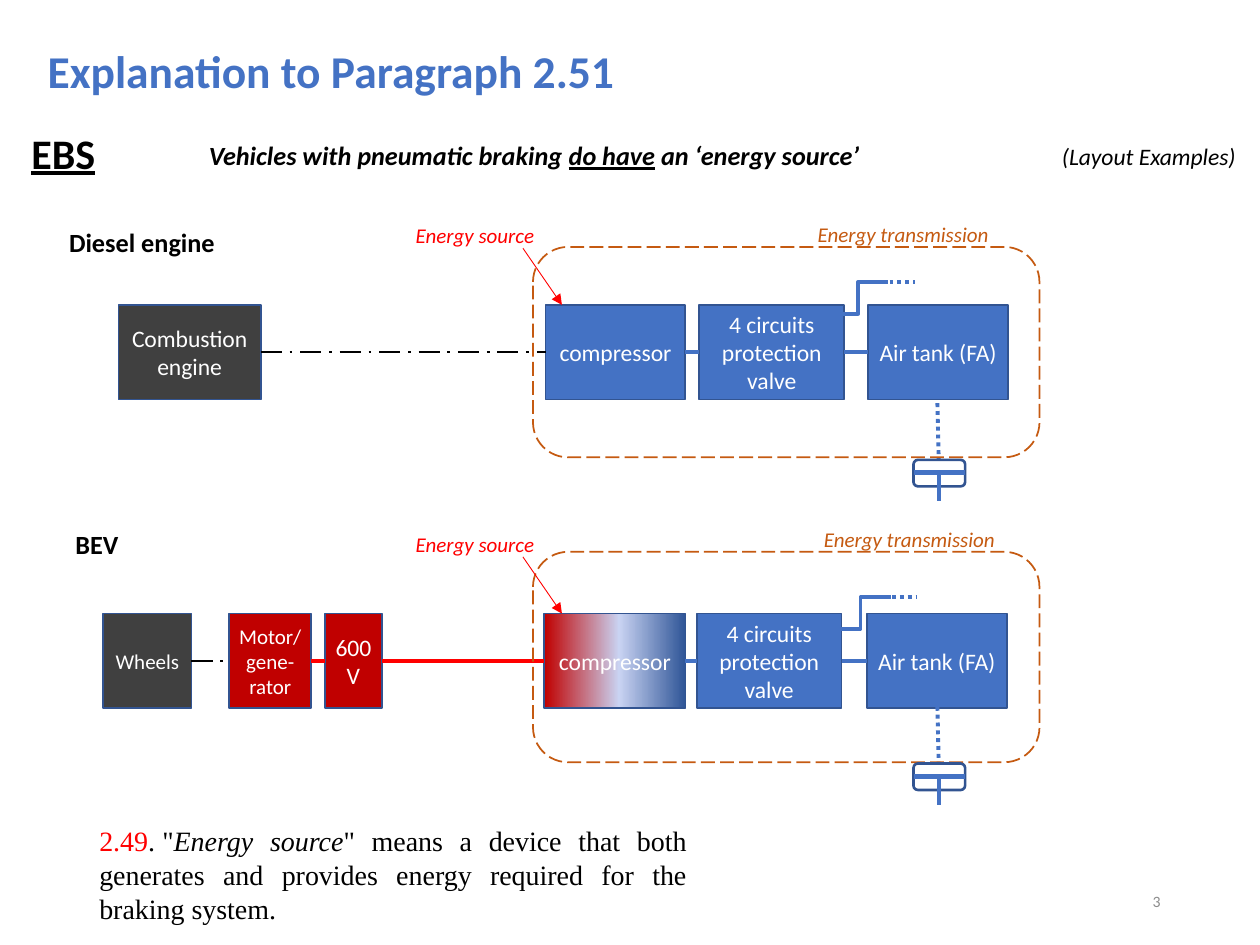
from copy import deepcopy
from pptx import Presentation
from pptx.dml.color import RGBColor
from pptx.enum.dml import MSO_LINE
from pptx.enum.shapes import MSO_CONNECTOR, MSO_SHAPE
from pptx.enum.text import MSO_ANCHOR, MSO_AUTO_SIZE, PP_ALIGN
from pptx.oxml.ns import qn
from pptx.util import Inches, Pt
from lxml import etree

BLACK = RGBColor(0x00, 0x00, 0x00)
WHITE = RGBColor(0xFF, 0xFF, 0xFF)
GRAY = RGBColor(0x8C, 0x8C, 0x8C)
DARK = RGBColor(0x40, 0x40, 0x40)
BLUE = RGBColor(0x44, 0x72, 0xC4)
NAVY = RGBColor(0x32, 0x54, 0x91)
DEEP = RGBColor(0x2F, 0x55, 0x97)
PALE = RGBColor(0xC9, 0xD3, 0xF2)
RUST = RGBColor(0xC5, 0x5A, 0x11)
MAROON = RGBColor(0xC0, 0x00, 0x00)
RED = RGBColor(0xFF, 0x00, 0x00)

deck = Presentation()
deck.slide_width, deck.slide_height = Inches(10), Inches(7.5)
slide = deck.slides.add_slide(deck.slide_layouts[6])
shapes = slide.shapes


def label(x, y, w, h, text, size, color, bold=False, italic=False, wrap=False):
    frame = shapes.add_textbox(Inches(x), Inches(y), Inches(w), Inches(h)).text_frame
    frame.word_wrap = wrap
    para = frame.paragraphs[0]
    para.text = text
    font = para.font
    font.name, font.size, font.bold, font.italic = "Calibri", Pt(size), bold, italic
    font.color.rgb = color
    return frame


def wire(x1, y1, x2, y2, color, width, dash=None):
    line = shapes.add_connector(
        MSO_CONNECTOR.STRAIGHT, Inches(x1), Inches(y1), Inches(x2), Inches(y2))
    line.line.color.rgb = color
    line.line.width = Pt(width)
    if dash:
        line.line.dash_style = dash
    etree.SubElement(line._element.spPr, qn("a:effectLst"))
    return line


boxes = {}
for key, x, y, w, text, size, fill in [
    ("engine", 0.94, 2.42, 1.13, "Combustion engine", 13.5, DARK),
    ("comp1", 4.33, 2.42, 1.11, "compressor", 13.5, BLUE),
    ("valve1", 5.55, 2.42, 1.15, "4 circuits protection valve", 13.5, BLUE),
    ("tank1", 6.89, 2.42, 1.11, "Air tank (FA)", 13.5, BLUE),
    ("wheels", 0.82, 4.87, 0.7, "Wheels", 12, DARK),
    ("motor", 1.82, 4.87, 0.65, "Motor/ gene-rator", 12, MAROON),
    ("volt", 2.58, 4.87, 0.45, "600V", 13.5, MAROON),
    ("comp2", 4.32, 4.87, 1.12, "compressor", 13.5, None),
    ("valve2", 5.53, 4.87, 1.15, "4 circuits protection valve", 13.5, BLUE),
    ("tank2", 6.88, 4.87, 1.11, "Air tank (FA)", 13.5, BLUE),
]:
    box = shapes.add_shape(
        MSO_SHAPE.RECTANGLE, Inches(x), Inches(y), Inches(w), Inches(0.75))
    box.shadow.inherit = False
    box.line.color.rgb = NAVY
    box.line.width = Pt(1)
    if fill:
        box.fill.solid()
        box.fill.fore_color.rgb = fill
    else:
        box.fill.gradient()
        box.fill.gradient_angle = 0
        stops = box._element.spPr.find(qn("a:gradFill")).find(qn("a:gsLst"))
        stops.insert(1, deepcopy(stops[0]))
        for stop, color, place in zip(
                box.fill.gradient_stops, (MAROON, PALE, DEEP), (0, 0.53, 1)):
            stop.color.rgb = color
            stop.position = place
    frame = box.text_frame
    frame.word_wrap = True
    frame.vertical_anchor = MSO_ANCHOR.MIDDLE
    frame.margin_left = frame.margin_right = Inches(0.07)
    frame.margin_top = frame.margin_bottom = Inches(0.04)
    para = frame.paragraphs[0]
    para.text = text
    para.alignment = PP_ALIGN.CENTER
    para.font.name, para.font.size = "Calibri", Pt(size)
    para.font.color.rgb = WHITE
    boxes[key] = box

for start, end, color, width, dash in [
    ("engine", "comp1", BLACK, 1.5, MSO_LINE.LONG_DASH_DOT),
    ("comp1", "valve1", BLUE, 2.25, None),
    ("valve1", "tank1", BLUE, 2.25, None),
    ("wheels", "motor", BLACK, 1.5, MSO_LINE.LONG_DASH_DOT),
    ("motor", "volt", RED, 2.25, None),
    ("volt", "comp2", RED, 2.25, None),
    ("comp2", "valve2", BLUE, 2.25, None),
    ("valve2", "tank2", BLUE, 2.25, None),
]:
    link = wire(0, 0, 1, 1, color, width, dash)
    link.begin_connect(boxes[start], 3)
    link.end_connect(boxes[end], 1)

for top, frame_y, note_x, pipe_x, pipe_y, drop, cup in [
    (2.42, 1.96, 6.39, 6.65, 2.24, 3.2, 3.65),
    (4.87, 4.38, 6.44, 6.67, 4.74, 5.61, 6.06),
]:
    pipe = shapes.build_freeform(Inches(pipe_x), Inches(pipe_y + 0.25))
    pipe.add_line_segments(
        [(Inches(pipe_x + dx), Inches(pipe_y + dy))
         for dx, dy in ((0.16, 0.25), (0.16, 0), (0.4, 0))], close=False)
    bend = pipe.convert_to_shape()
    bend.shadow.inherit = False
    bend.fill.background()
    bend.line.color.rgb = BLUE
    bend.line.width = Pt(2.25)
    wire(pipe_x + 0.41, pipe_y, pipe_x + 0.61, pipe_y, BLUE, 2.25, MSO_LINE.ROUND_DOT)

    wire(7.44, drop, 7.45, cup, BLUE, 2.25, MSO_LINE.ROUND_DOT)
    for x, y, w, h, color, width, dash in [
        (4.23, frame_y, 4.02, 1.67, RUST, 1, MSO_LINE.LONG_DASH),
        (7.25, cup, 0.41, 0.21, NAVY, 1.5, None),
    ]:
        ring = shapes.add_shape(
            MSO_SHAPE.ROUNDED_RECTANGLE, Inches(x), Inches(y), Inches(w), Inches(h))
        ring.shadow.inherit = False
        ring.fill.background()
        ring.line.color.rgb = color
        ring.line.width = Pt(width)
        if dash:
            ring.line.dash_style = dash
    wire(7.25, cup + 0.1, 7.66, cup + 0.1, BLUE, 3)
    wire(7.45, cup + 0.09, 7.45, cup + 0.33, BLUE, 2.25)

    label(note_x, frame_y - 0.25, 1.73, 0.3, "Energy transmission", 12, RUST,
          italic=True, wrap=True)
    label(3.2, top - 0.7, 1.15, 0.3, "Energy source", 12, RED, italic=True)
    arrow = wire(4.15, top - 0.45, 4.46, top, RED, 0.5)
    arrow.line._get_or_add_ln().append(
        etree.Element(qn("a:tailEnd"), type="triangle"))

title = label(0.28, 0.09, 7.72, 0.94, "Explanation to Paragraph 2.51", 26, BLUE,
              bold=True, wrap=True)
title.vertical_anchor = MSO_ANCHOR.MIDDLE
title.paragraphs[0].space_after = Pt(12)
ebs = label(0.15, 0.96, 0.72, 0.5, "EBS", 24, BLACK, bold=True)
ebs.paragraphs[0].font.underline = True
label(0.45, 1.75, 1.36, 0.35, "Diesel engine", 15, BLACK, bold=True)
label(0.5, 4.14, 0.55, 0.35, "BEV", 15, BLACK, bold=True)
label(8.33, 1.08, 1.6, 0.33, "(Layout Examples)", 13.5, BLACK, italic=True)

head = label(1.56, 1.06, 5.4, 0.35, "Vehicles with pneumatic braking ", 15, BLACK,
             bold=True, italic=True).paragraphs[0]
for text, under in [("do have", True), (" an ‘energy source’", False)]:
    run = head.add_run()
    run.text = text
    run.font.underline = under

rule = label(0.69, 6.49, 4.86, 0.91, "", 16, BLACK, wrap=True)
rule.auto_size = MSO_AUTO_SIZE.SHAPE_TO_FIT_TEXT
para = rule.paragraphs[0]
para.alignment = PP_ALIGN.JUSTIFY
para.space_after = Pt(6)
para.font.name = "Times New Roman"
for text, color, slant in [
    ("2.49", RED, False),
    (".\t\"", BLACK, False),
    ("Energy source", BLACK, True),
    ("\" means a device that both generates and provides energy required "
     "for the braking system.", BLACK, False),
]:
    run = para.add_run()
    run.text = text
    run.font.color.rgb = color
    run.font.italic = slant

page = label(7.06, 6.95, 2.25, 0.4, "3", 9, GRAY, wrap=True)
page.vertical_anchor = MSO_ANCHOR.MIDDLE
page.paragraphs[0].alignment = PP_ALIGN.RIGHT

deck.save("out.pptx")
